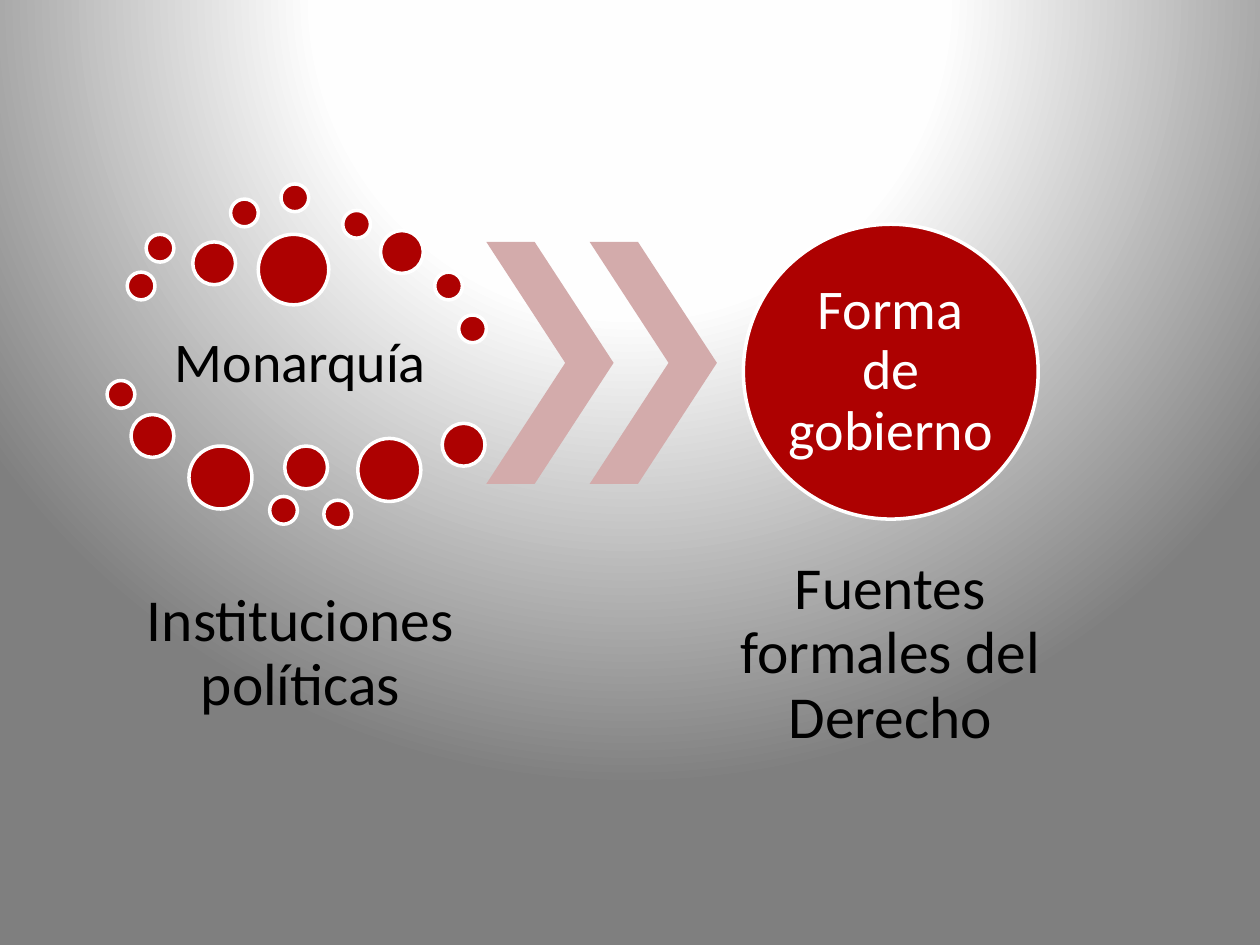
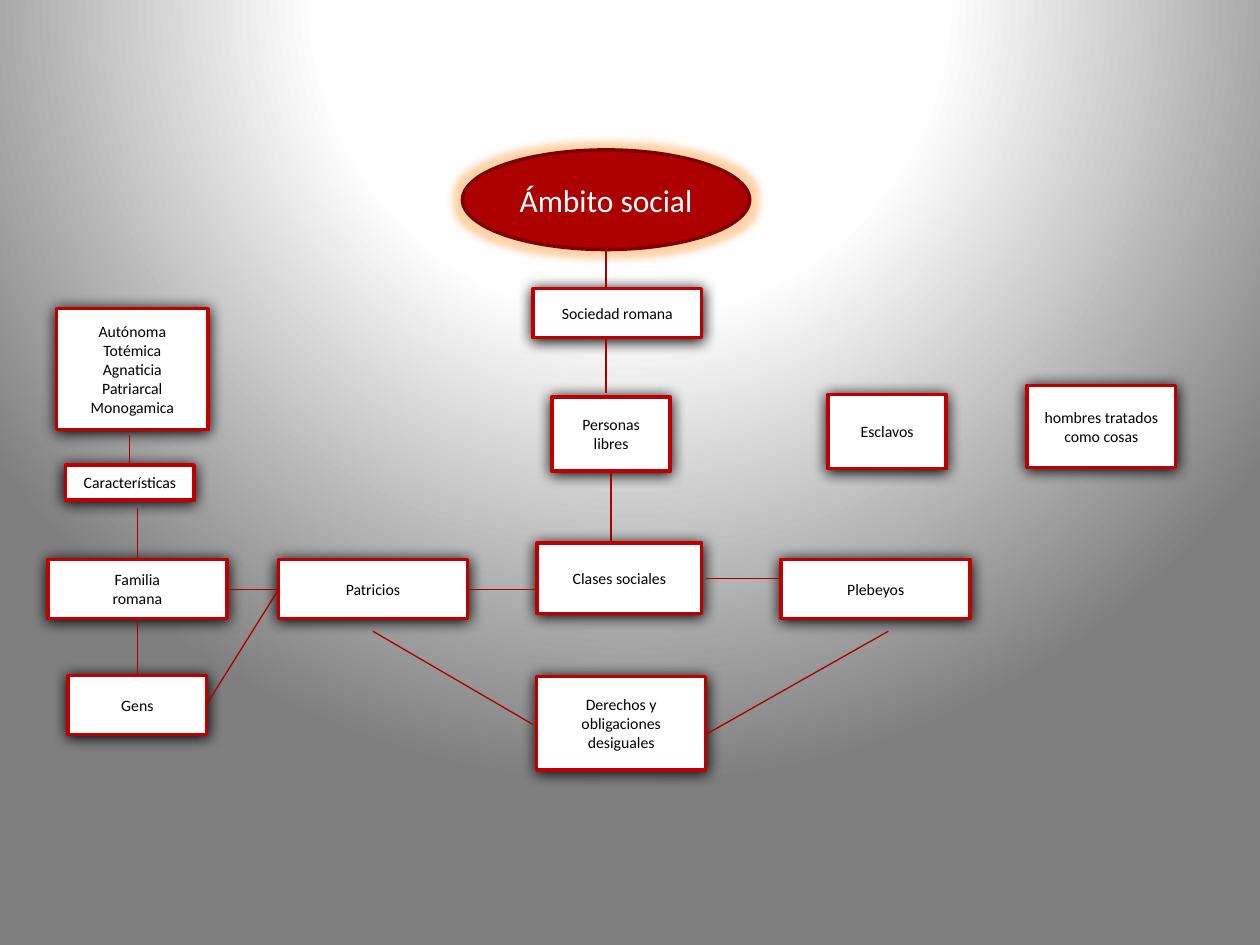
from lxml import etree
from pptx import Presentation
from pptx.dml.color import RGBColor
from pptx.enum import shapes, text
from pptx.oxml import ns
from pptx.util import Inches, Pt

COLS, ROWS = 100, 75
RED, DARK_RED, BORDER, LINK = "AD0101", "800101", "C00000", "AA0000"
WHITE, BLACK, PINK = "FFFFFF", "000000", "D3ABAB"
FONT = "Calibri"
OVAL, RECT = shapes.MSO_SHAPE.OVAL, shapes.MSO_SHAPE.RECTANGLE

BACKGROUND = f"""<p:bg {ns.nsdecls('p', 'a')}><p:bgPr><a:gradFill rotWithShape="1"><a:gsLst>
<a:gs pos="0"><a:srgbClr val="FFFFFF"/></a:gs>
<a:gs pos="40000"><a:srgbClr val="FEFEFE"/></a:gs>
<a:gs pos="100000"><a:srgbClr val="7F7F7F"/></a:gs></a:gsLst>
<a:path path="circle"><a:fillToRect l="50000" t="-80000" r="50000" b="180000"/></a:path>
</a:gradFill><a:effectLst/></p:bgPr></p:bg>"""
SHADOW = f"""<a:outerShdw {ns.nsdecls('a')} blurRad="107950" dist="12700" dir="5400000" rotWithShape="0">
<a:srgbClr val="000000"/></a:outerShdw>"""
GLOW = f"""<a:glow {ns.nsdecls('a')} rad="101600">
<a:srgbClr val="FFB870"><a:alpha val="60000"/></a:srgbClr></a:glow>"""

prs = Presentation()
prs.slide_width, prs.slide_height = Inches(10), Inches(7.5)


def rgb(color):
    return RGBColor.from_string(color)


def grid(*cells):
    units = (prs.slide_width / COLS, prs.slide_height / ROWS)
    return [round(cell * units[i % 2]) for i, cell in enumerate(cells)]


def put_text(sp, content, size=9, color=BLACK, inset=0.05, spacing=1.0):
    tf = sp.text_frame
    tf.word_wrap = True
    tf.vertical_anchor = text.MSO_ANCHOR.MIDDLE
    tf.margin_left = tf.margin_right = Inches(inset)
    tf.margin_top = tf.margin_bottom = Inches(min(inset, 0.05))
    tf.text = content
    for p in tf.paragraphs:
        p.alignment = text.PP_ALIGN.CENTER
        p.line_spacing = spacing
        for r in p.runs:
            r.font.name, r.font.size = FONT, Pt(size)
            r.font.color.rgb = rgb(color)


def add_shape(slide, kind, cells, fill, line=None, effect=None):
    sp = slide.shapes.add_shape(kind, *grid(*cells))
    sp.shadow.inherit = False
    sp.fill.solid()
    sp.fill.fore_color.rgb = rgb(fill)
    if line:
        sp.line.color.rgb = rgb(line)
        sp.line.width = Pt(2)
    else:
        sp.line.fill.background()
    if effect:
        effects = sp.element.spPr.find(ns.qn("a:effectLst"))
        effects.append(etree.fromstring(effect))
    return sp


def add_label(slide, cells, content, size):
    sp = slide.shapes.add_textbox(*grid(*cells))
    put_text(sp, content, size=size, spacing=0.9)


def add_link(slide, *ends):
    line = slide.shapes.add_connector(shapes.MSO_CONNECTOR.STRAIGHT, *grid(*ends))
    line.line.color.rgb = rgb(LINK)
    line.line.width = Pt(0.75)
    etree.SubElement(line.element.spPr, ns.qn("a:effectLst"))


def add_institutions(slide, x, y):
    add_label(slide, (x + 1.6, y + 9.8, 27.5, 9), "Monarquía", 32)
    add_label(slide, (x + 1.6, y + 28.9, 27.5, 16.9), "Instituciones políticas", 34)
    dots = {
        2.2: [(1.6, 7), (3.1, 4), (9.8, 1.2), (13.8, 0), (18.7, 2.1), (26, 7),
              (27.9, 10.4), (0, 15.6), (12.9, 24.8), (17.2, 25.1)],
        3.4: [(6.8, 4.6), (21.7, 3.7), (1.9, 18.3), (14.1, 20.8), (26.6, 19)],
        5: [(6.5, 20.8), (19.9, 20.2)],
        5.6: [(12, 4)],
    }
    for size, places in dots.items():
        for dx, dy in places:
            add_shape(slide, OVAL, (x + dx, y + dy, size, size), RED, WHITE)


def add_chevrons(slide, x, y):
    for i in range(2):
        sp = add_shape(slide, shapes.MSO_SHAPE.CHEVRON, (x + i * 8.2, y, 10.1, 19.2), PINK)
        sp.adjustments[0] = 0.62


def add_government(slide, x, y):
    sp = add_shape(slide, OVAL, (x + 2.1, y, 23.4, 23.4), RED, WHITE)
    put_text(sp, "Forma de gobierno", size=32, color=WHITE, inset=0, spacing=0.9)
    add_label(slide, (x, y + 25.7, 27.5, 16.9), "Fuentes formales del Derecho", 34)


def add_region(slide, x, y, boxes, links=()):
    for content, dx, dy, w, h in boxes:
        sp = add_shape(slide, RECT, (x + dx, y + dy, w, h), WHITE, BORDER, SHADOW)
        put_text(sp, content, inset=0.12)
    for x1, y1, x2, y2 in links:
        add_link(slide, x + x1, y + y1, x + x2, y + y2)


def add_society(slide, x, y):
    sp = add_shape(slide, OVAL, (x, y, 22.8, 7.9), RED, DARK_RED, GLOW)
    put_text(sp, "Ámbito social", size=18, color=WHITE)
    add_region(slide, x, y, [
        ("Sociedad romana", 5.6, 11, 13.4, 3.9),
        ("Personas libres", 7.1, 19.6, 9.4, 5.9),
        ("Esclavos", 29, 19.4, 9.4, 5.9),
        ("hombres tratados como cosas", 44.8, 18.7, 11.8, 6.5),
    ], [
        (11.4, 7.9, 11.4, 10.9),
        (11.4, 14.9, 11.4, 19.3),
        (11.8, 25.5, 11.8, 31.2),
    ])


def add_family(slide, x, y):
    add_region(slide, x, y, [
        ("Autónoma\nTotémica\nAgnaticia\nPatriarcal\nMonogamica", 0.7, 0, 12, 9.6),
        ("Características", 1.4, 12.4, 10.2, 2.8),
        ("Familia\nromana", 0, 19.9, 14.2, 4.7),
        ("Gens", 1.6, 29.1, 11, 4.7),
    ], [
        (6.5, 12.4, 6.5, 10),
        (7.1, 19.9, 7.1, 15.8),
        (7.1, 24.6, 7.1, 29.1),
    ])


def add_classes(slide, x, y):
    add_region(slide, x, y, [
        ("Clases sociales", 20.5, 0, 13.1, 5.6),
        ("Patricios", 0, 1.3, 15, 4.7),
        ("Plebeyos", 39.9, 1.3, 15, 4.7),
        ("Derechos y obligaciones desiguales", 20.5, 10.6, 13.4, 7.4),
    ], [
        (7.5, 7, 20.2, 14.4),
        (48.4, 7, 33.9, 15.2),
        (15, 3.7, 20.5, 3.7),
        (33.9, 2.8, 39.9, 2.8),
        (0, 3.7, -4.1, 3.7),
        (0, 3.7, -5.7, 12.8),
    ])


def set_background():
    c_sld = prs.slide_master.element.cSld
    old = c_sld.find(ns.qn("p:bg"))
    if old is not None:
        c_sld.remove(old)
    c_sld.insert(0, etree.fromstring(BACKGROUND))


def add_slide():
    return prs.slides.add_slide(prs.slide_layouts[6])


def main():
    set_background()
    monarchy = add_slide()
    add_institutions(monarchy, 8.5, 14.6)
    add_chevrons(monarchy, 38.6, 19.2)
    add_government(monarchy, 56.9, 17.8)
    social = add_slide()
    add_society(social, 36.7, 11.9)
    add_family(social, 3.8, 24.5)
    add_classes(social, 22.1, 43.1)
    prs.save("out.pptx")


if __name__ == "__main__":
    main()
